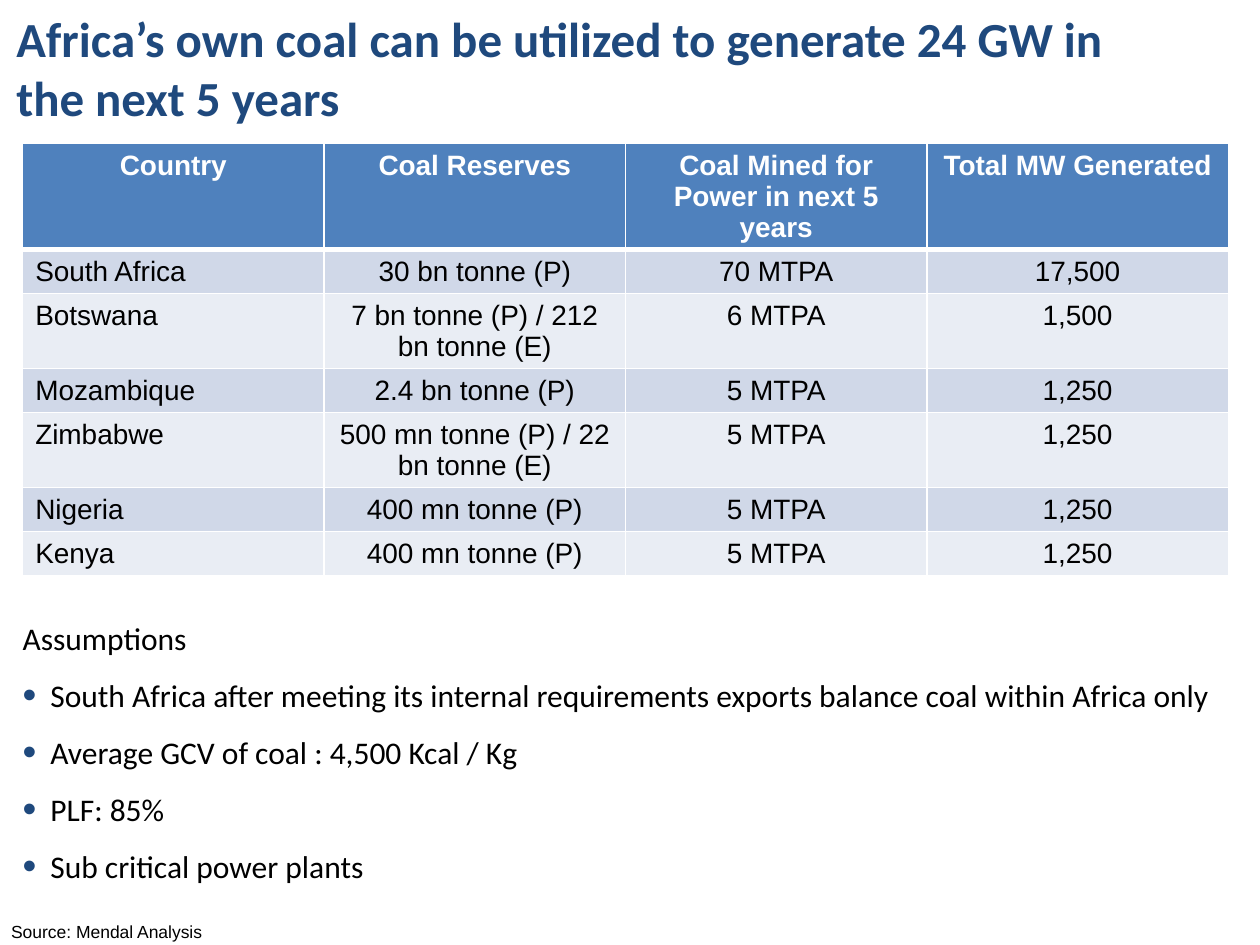
from lxml.etree import SubElement
from pptx import Presentation
from pptx.dml.color import RGBColor
from pptx.enum.text import MSO_ANCHOR, PP_ALIGN as Align
from pptx.oxml.ns import qn
from pptx.util import Inches, Pt

NAVY, BLUE, WHITE, BLACK = "1F497D", "4F81BD", "FFFFFF", "000000"
BANDS = ("D0D8E8", "E9EDF4")
ROWS = [
    ("Country", "Coal Reserves", "Coal Mined for Power in next 5 years", "Total MW Generated"),
    ("South Africa", "30 bn tonne (P)", "70 MTPA", "17,500"),
    ("Botswana", "7 bn tonne (P) / 212 bn tonne (E)", "6 MTPA", "1,500"),
    ("Mozambique", "2.4 bn tonne (P)", "5 MTPA", "1,250"),
    ("Zimbabwe", "500 mn tonne (P) / 22 bn tonne (E)", "5 MTPA", "1,250"),
    ("Nigeria", "400 mn tonne (P)", "5 MTPA", "1,250"),
    ("Kenya", "400 mn tonne (P)", "5 MTPA", "1,250"),
]
ROW_HEIGHTS = (0.84, 0.35, 0.59, 0.35, 0.59, 0.35, 0.35)
ASSUMPTIONS = [
    "South Africa after meeting its internal requirements exports balance coal within Africa only",
    "Average GCV of coal : 4,500 Kcal / Kg",
    "PLF: 85%",
    "Sub critical power plants",
]


def color(value):
    return RGBColor.from_string(value)


class SlideBuilder:
    heading_font = "Calibri"
    table_font = "Arial"

    def __init__(self, deck):
        self.page = deck.slides.add_slide(deck.slide_layouts[5])

    def format(self, para, font, size, hex_color, bold=False, align=Align.LEFT):
        para.alignment = align
        for span in para.runs:
            span.font.name = font
            span.font.size = Pt(size)
            span.font.bold = bold
            span.font.color.rgb = color(hex_color)

    def clear_margins(self, frame):
        frame.margin_left = frame.margin_right = 0
        frame.margin_top = frame.margin_bottom = 0

    def title(self, text, left, top, width, height):
        box = self.page.shapes.title
        box.left, box.top = Inches(left), Inches(top)
        box.width, box.height = Inches(width), Inches(height)
        frame = box.text_frame
        self.clear_margins(frame)
        frame.vertical_anchor = MSO_ANCHOR.TOP
        frame.text = text
        self.format(frame.paragraphs[0], self.heading_font, 28, NAVY, bold=True)

    def borders(self, cell, bottom_width):
        properties = cell._tc.get_or_add_tcPr()
        for side, width in (("L", 1), ("R", 1), ("T", 1), ("B", bottom_width)):
            line = SubElement(properties, qn(f"a:ln{side}"), w=str(Pt(width)))
            fill = SubElement(line, qn("a:solidFill"))
            SubElement(fill, qn("a:srgbClr"), val=WHITE)

    def table(self, rows, heights, left, top, width):
        table = self.page.shapes.add_table(
            len(rows), len(rows[0]), Inches(left), Inches(top),
            Inches(width), Inches(sum(heights))).table
        for row, height in zip(table.rows, heights):
            row.height = Inches(height)
        for row_index, texts in enumerate(rows):
            header = row_index == 0
            for column_index, text in enumerate(texts):
                cell = table.cell(row_index, column_index)
                self.borders(cell, 3 if header else 1)
                cell.fill.solid()
                cell.fill.fore_color.rgb = color(BLUE if header else BANDS[(row_index - 1) % 2])
                cell.text = text
                centered = header or column_index > 0
                self.format(cell.text_frame.paragraphs[0], self.table_font, 16,
                            WHITE if header else BLACK, bold=header,
                            align=Align.CENTER if centered else Align.LEFT)

    def text_box(self, left, top, width, height):
        box = self.page.shapes.add_textbox(Inches(left), Inches(top), Inches(width), Inches(height))
        box.text_frame.word_wrap = True
        return box.text_frame

    def bullet(self, para):
        properties = para._p.get_or_add_pPr()
        properties.set("marL", str(Inches(0.22)))
        properties.set("indent", str(Inches(-0.22)))
        bullet_color = SubElement(properties, qn("a:buClr"))
        SubElement(bullet_color, qn("a:srgbClr"), val=NAVY)
        SubElement(properties, qn("a:buSzPct"), val="125000")
        SubElement(properties, qn("a:buFont"), typeface="Arial")
        SubElement(properties, qn("a:buChar"), char="•")

    def bullet_list(self, heading, items, left, top, width, height):
        frame = self.text_box(left, top, width, height)
        self.clear_margins(frame)
        frame.text = "\n".join([heading, *items])
        for index, para in enumerate(frame.paragraphs):
            if index > 0:
                self.bullet(para)
                para.space_before = Pt(11)
            self.format(para, self.heading_font, 18, BLACK, align=Align.JUSTIFY)

    def source_note(self, text, left, top, width, height):
        frame = self.text_box(left, top, width, height)
        frame.text = text
        self.format(frame.paragraphs[0], self.table_font, 10, BLACK)


def main():
    deck = Presentation()
    deck.slide_width, deck.slide_height = Inches(10), Inches(7.5)
    slide = SlideBuilder(deck)
    slide.title("Africa’s own coal can be utilized to generate 24 GW in\vthe next 5 years",
                0.13, 0.07, 9.62, 0.94)
    slide.table(ROWS, ROW_HEIGHTS, 0.18, 1.14, 9.57)
    slide.bullet_list("Assumptions", ASSUMPTIONS, 0.18, 4.91, 9.67, 2.44)
    slide.source_note("Source: Mendal Analysis", -0.01, 7.26, 2, 0.27)
    deck.save("out.pptx")


if __name__ == "__main__":
    main()
